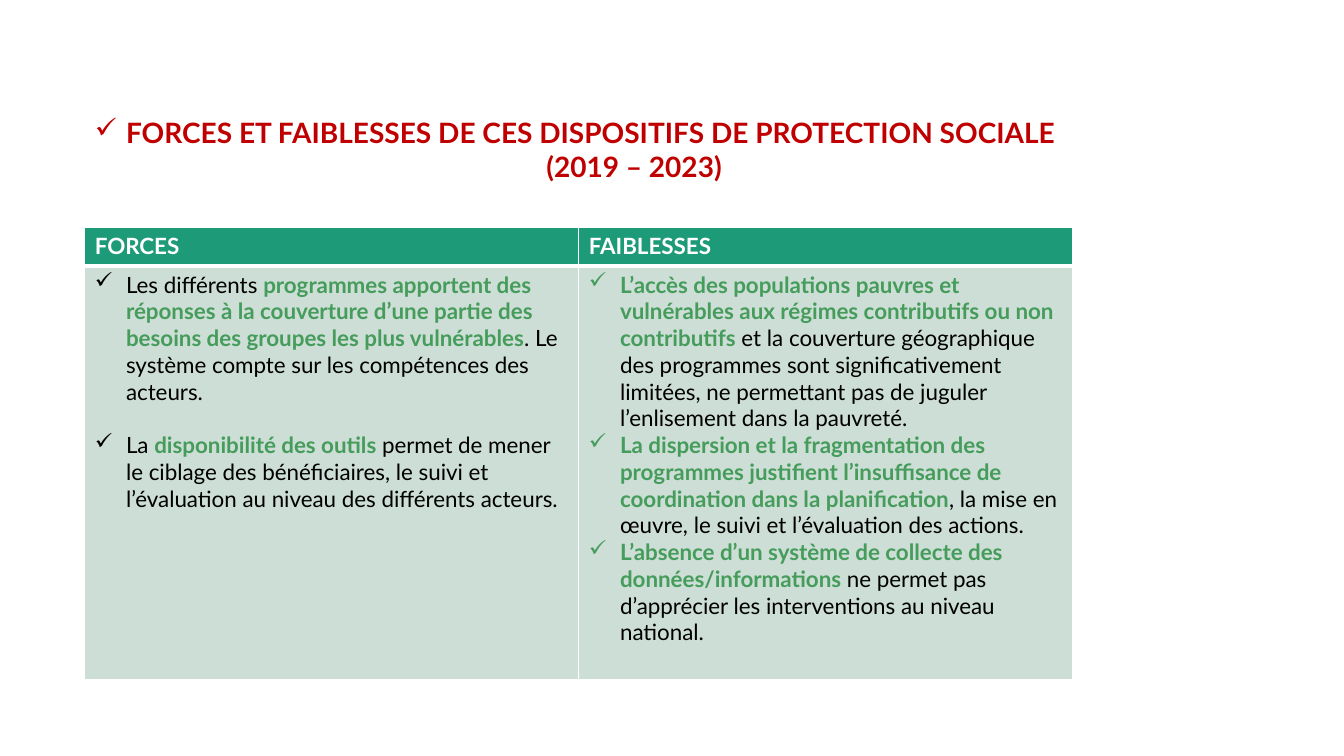
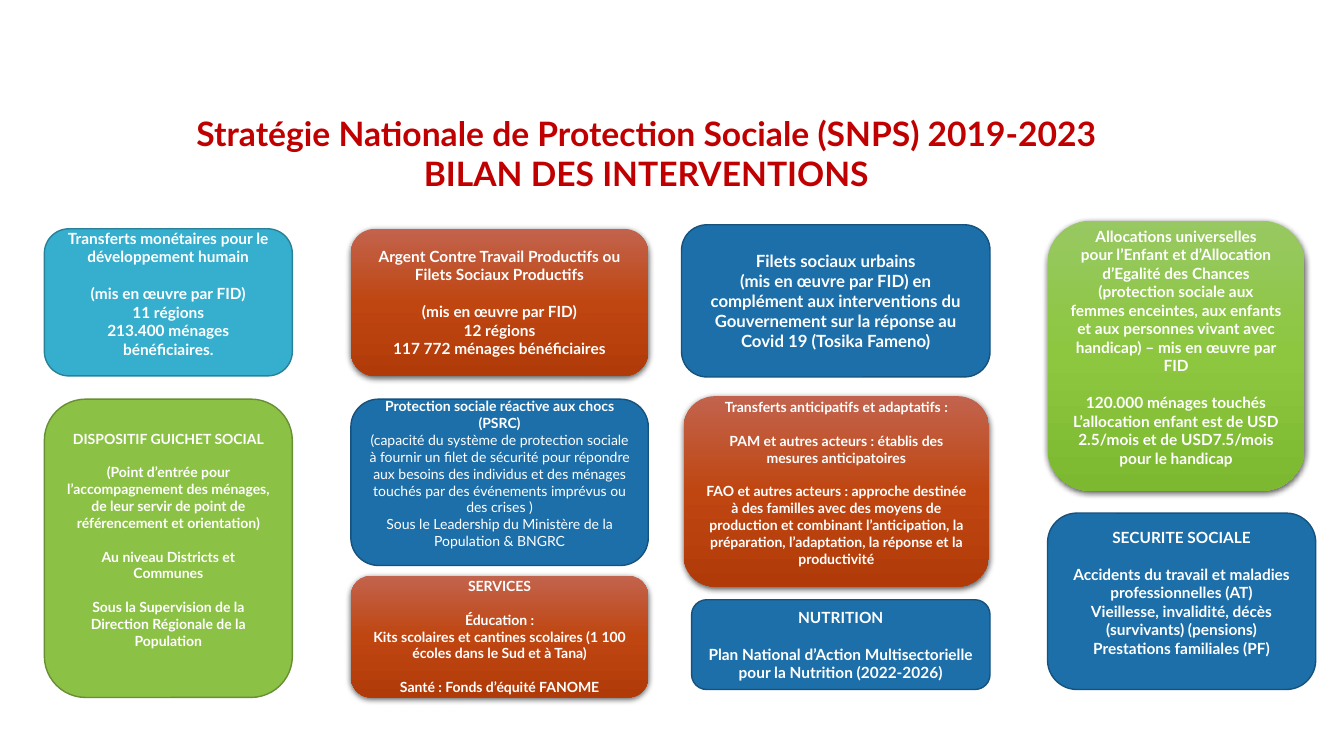
from pptx import Presentation
from pptx import util as u
from pptx.dml.color import RGBColor
from pptx.enum import shapes, text
from pptx.oxml.ns import qn
from lxml import etree

PX = 9144
FONT = "Lato"
LINE_HEIGHT = 1.2
TITLE_ONLY = 5
INSET = 5
RAISED_INSET = 22
BULLET_INDENT = 31

WHITE = RGBColor(0xFF, 0xFF, 0xFF)
BLACK = RGBColor(0x00, 0x00, 0x00)
RED = RGBColor(0xC0, 0x00, 0x00)
ACCENT = RGBColor(0x45, 0x9C, 0x5B)
HEADER = RGBColor(0x1D, 0x9A, 0x78)
BODY = RGBColor(0xCD, 0xDE, 0xD6)

CYAN = (RGBColor(0x36, 0xAF, 0xCE), RGBColor(0x28, 0x81, 0x98))
GREEN = (RGBColor(0x8B, 0xC1, 0x45), RGBColor(0x67, 0x8F, 0x33))
BLUE = (RGBColor(0x1D, 0x6F, 0xA9), RGBColor(0x15, 0x52, 0x7D))
RUST_STOPS = (RGBColor(0xC2, 0x63, 0x4D), RGBColor(0xBF, 0x46, 0x11), RGBColor(0xB1, 0x3B, 0x08))
LIME_STOPS = (RGBColor(0x98, 0xC8, 0x62), RGBColor(0x8C, 0xC7, 0x3F), RGBColor(0x7D, 0xB8, 0x31))

STRENGTHS = (
    (("Les différents ", False),
     ("programmes apportent des réponses à la couverture d’une partie des besoins des groupes les plus vulnérables", True),
     (". Le système compte sur les compétences des acteurs.", False)),
    (("La ", False),
     ("disponibilité des outils ", True),
     ("permet de mener le ciblage des bénéficiaires, le suivi et l’évaluation au niveau des différents acteurs.", False)),
)
WEAKNESSES = (
    (("L’accès des populations pauvres et vulnérables aux régimes contributifs ou non contributifs", True),
     (" et la couverture géographique des programmes sont significativement limitées, ne permettant pas de juguler l’enlisement dans la pauvreté.", False)),
    (("La dispersion et la fragmentation des programmes justifient l’insuffisance de coordination dans la planification", True),
     (", la mise en œuvre, le suivi et l’évaluation des actions.", False)),
    (("L’absence d’un système de collecte des données/informations ", True),
     ("ne permet pas d’apprécier les interventions au niveau national.", False)),
)


def px(value):
    return u.Emu(value * PX)


def add_span(para, words, *, size, color, bold=True, align=None, before=None):
    span = para.add_run()
    span.text = words
    span.font.name = FONT
    span.font.size = u.Pt(size)
    span.font.bold = bold
    span.font.color.rgb = color
    if align is not None:
        para.alignment = align
    if before:
        para.space_before = u.Pt(before)


def next_para(frame, index):
    return frame.add_paragraph() if index else frame.paragraphs[0]


def add_check(para):
    props = para._p.get_or_add_pPr()
    props.set("marL", str(px(BULLET_INDENT)))
    props.set("indent", str(-px(BULLET_INDENT)))
    etree.SubElement(props, qn("a:buChar"), char="✓")


def add_page(deck, box, lines, size, checked=False):
    page = deck.slides.add_slide(deck.slide_layouts[TITLE_ONLY])
    title = page.shapes.title
    title.left, title.top, title.width, title.height = map(px, box)
    frame = title.text_frame
    frame.auto_size = text.MSO_AUTO_SIZE.NONE
    frame.vertical_anchor = text.MSO_ANCHOR.TOP
    for index, line in enumerate(lines):
        para = next_para(frame, index)
        align = text.PP_ALIGN.CENTER
        if checked and index == 0:
            add_check(para)
            align = text.PP_ALIGN.LEFT
        add_span(para, line, size=size, color=RED, align=align)
    return page


def set_borders(cell, **widths):
    props = cell._tc.get_or_add_tcPr()
    for index, side in enumerate("LRTB"):
        line = etree.Element(qn(f"a:ln{side}"), w=str(u.Pt(widths.get(side, 1))))
        fill = etree.SubElement(line, qn("a:solidFill"))
        etree.SubElement(fill, qn("a:srgbClr"), val=str(WHITE))
        props.insert(index, line)


def fill_cell(cell, color, **widths):
    cell.fill.solid()
    cell.fill.fore_color.rgb = color
    set_borders(cell, **widths)


def add_comparison(page, box, row_heights, columns):
    table = page.shapes.add_table(2, len(columns), *map(px, box)).table
    table.horz_banding = False
    for row, height in zip(table.rows, row_heights):
        row.height = px(height)
    for index, (heading, points, gap) in enumerate(columns):
        head, body = table.cell(0, index), table.cell(1, index)
        fill_cell(head, HEADER, B=3)
        add_span(head.text_frame.paragraphs[0], heading, size=16, color=WHITE)
        fill_cell(body, BODY, T=3)
        for order, point in enumerate(points):
            para = next_para(body.text_frame, order)
            add_check(para)
            for words, strong in point:
                add_span(para, words, size=16, bold=strong,
                         color=ACCENT if strong else BLACK,
                         before=gap if order else None)


def paint_flat(card, colors):
    fill, line = colors
    card.fill.solid()
    card.fill.fore_color.rgb = fill
    card.line.color.rgb = line
    card.line.width = u.Pt(1)


def paint_raised(card, colors):
    card.fill.gradient()
    card.fill.gradient_angle = 270
    card.line.fill.background()
    props = card._element.spPr
    stops = props.find(".//" + qn("a:gsLst"))
    for stop in list(stops):
        stops.remove(stop)
    for index, color in enumerate(colors):
        stop = etree.SubElement(stops, qn("a:gs"), pos=str(index * 50000))
        etree.SubElement(stop, qn("a:srgbClr"), val=str(color))
    shadow = etree.SubElement(
        props.find(qn("a:effectLst")), qn("a:outerShdw"), blurRad=str(u.Pt(4.5)),
        dist=str(u.Pt(1.5)), dir="5400000", algn="ctr", rotWithShape="0")
    tint = etree.SubElement(shadow, qn("a:srgbClr"), val=str(BLACK))
    etree.SubElement(tint, qn("a:alpha"), val="63000")


def add_card(page, box, colors, size, *groups, bottom=INSET, bold_lines=None):
    card = page.shapes.add_shape(shapes.MSO_SHAPE.ROUNDED_RECTANGLE, *map(px, box))
    card.shadow.inherit = False
    paint = paint_flat if len(colors) == 2 else paint_raised
    paint(card, colors)
    frame = card.text_frame
    frame.word_wrap = True
    frame.vertical_anchor = text.MSO_ANCHOR.MIDDLE
    frame.margin_top, frame.margin_bottom = px(INSET), px(bottom)
    count = 0
    for group in groups:
        for order, line in enumerate(group.split("\n")):
            add_span(next_para(frame, count), line, size=size, color=WHITE,
                     bold=bold_lines is None or count < bold_lines,
                     align=text.PP_ALIGN.CENTER,
                     before=size * LINE_HEIGHT if count and order == 0 else None)
            count += 1


def build_strengths(deck):
    page = add_page(deck, (84, 110, 1090, 75),
                    ("FORCES ET FAIBLESSES DE CES DISPOSITIFS DE PROTECTION SOCIALE", "(2019 – 2023)"),
                    20, checked=True)
    add_comparison(page, (84, 226, 980, 448), (38, 410),
                   (("FORCES", STRENGTHS, 16 * LINE_HEIGHT), ("FAIBLESSES", WEAKNESSES, None)))


def build_review(deck):
    page = add_page(deck, (143, 107, 996, 91),
                    ("Stratégie Nationale de Protection Sociale (SNPS) 2019-2023", "BILAN DES INTERVENTIONS"), 24)
    add_card(page, (44, 227, 246, 146), CYAN, 11,
             "Transferts monétaires pour le développement humain",
             "(mis en œuvre par FID)\n11 régions\n213.400 ménages bénéficiaires.",
             bottom=RAISED_INSET)
    add_card(page, (44, 396, 246, 296), GREEN, 10,
             "DISPOSITIF GUICHET SOCIAL",
             "(Point d’entrée pour l’accompagnement des ménages, de leur servir de point de référencement et orientation)",
             "Au niveau Districts et Communes",
             "Sous la Supervision de la Direction Régionale de la Population",
             bottom=RAISED_INSET)
    add_card(page, (348, 227, 295, 146), RUST_STOPS, 11,
             "Argent Contre Travail Productifs ou Filets Sociaux Productifs",
             "(mis en œuvre par FID)\n12 régions\n117 772 ménages bénéficiaires")
    add_card(page, (348, 396, 295, 165), BLUE, 10,
             "Protection sociale réactive aux chocs (PSRC)\n"
             "(capacité du système de protection sociale à fournir un filet de sécurité pour répondre "
             "aux besoins des individus et des ménages touchés par des événements imprévus ou des crises )\n"
             "Sous le Leadership du Ministère de la Population & BNGRC",
             bottom=RAISED_INSET, bold_lines=1)
    add_card(page, (348, 571, 295, 121), RUST_STOPS, 10,
             "SERVICES",
             "Éducation :\nKits scolaires et cantines scolaires (1 100 écoles dans le Sud et à Tana)",
             "Santé : Fonds d’équité FANOME")
    add_card(page, (676, 223, 306, 151), BLUE, 12,
             "Filets sociaux urbains\n(mis en œuvre par FID) en complément aux interventions "
             "du Gouvernement sur la réponse au Covid 19 (Tosika Fameno)")
    add_card(page, (678, 393, 303, 189), RUST_STOPS, 10,
             "Transferts anticipatifs et adaptatifs :",
             "PAM et autres acteurs : établis des mesures anticipatoires",
             "FAO et autres acteurs : approche destinée à des familles avec des moyens de production et "
             "combinant l’anticipation, la préparation, l’adaptation, la réponse et la productivité",
             bottom=RAISED_INSET)
    add_card(page, (686, 595, 296, 89), BLUE, 11,
             "NUTRITION",
             "Plan National d’Action Multisectorielle pour la Nutrition (2022-2026)")
    add_card(page, (1039, 219, 255, 268), LIME_STOPS, 11,
             "Allocations universelles\npour l’Enfant et d’Allocation d’Egalité des Chances\n"
             "(protection sociale aux femmes enceintes, aux enfants et aux personnes vivant avec handicap) "
             "– mis en œuvre par FID",
             "120.000 ménages touchés\n"
             "L’allocation enfant est de USD 2.5/mois et de USD7.5/mois pour le handicap",
             bottom=RAISED_INSET)
    add_card(page, (1039, 509, 266, 175), BLUE, 11,
             "SECURITE SOCIALE",
             "Accidents du travail et maladies professionnelles (AT)\n"
             "Vieillesse, invalidité, décès (survivants) (pensions)\nPrestations familiales (PF)",
             bottom=RAISED_INSET)


def main():
    deck = Presentation()
    deck.slide_width, deck.slide_height = px(1333), px(750)
    build_strengths(deck)
    build_review(deck)
    deck.save("out.pptx")


if __name__ == "__main__":
    main()
